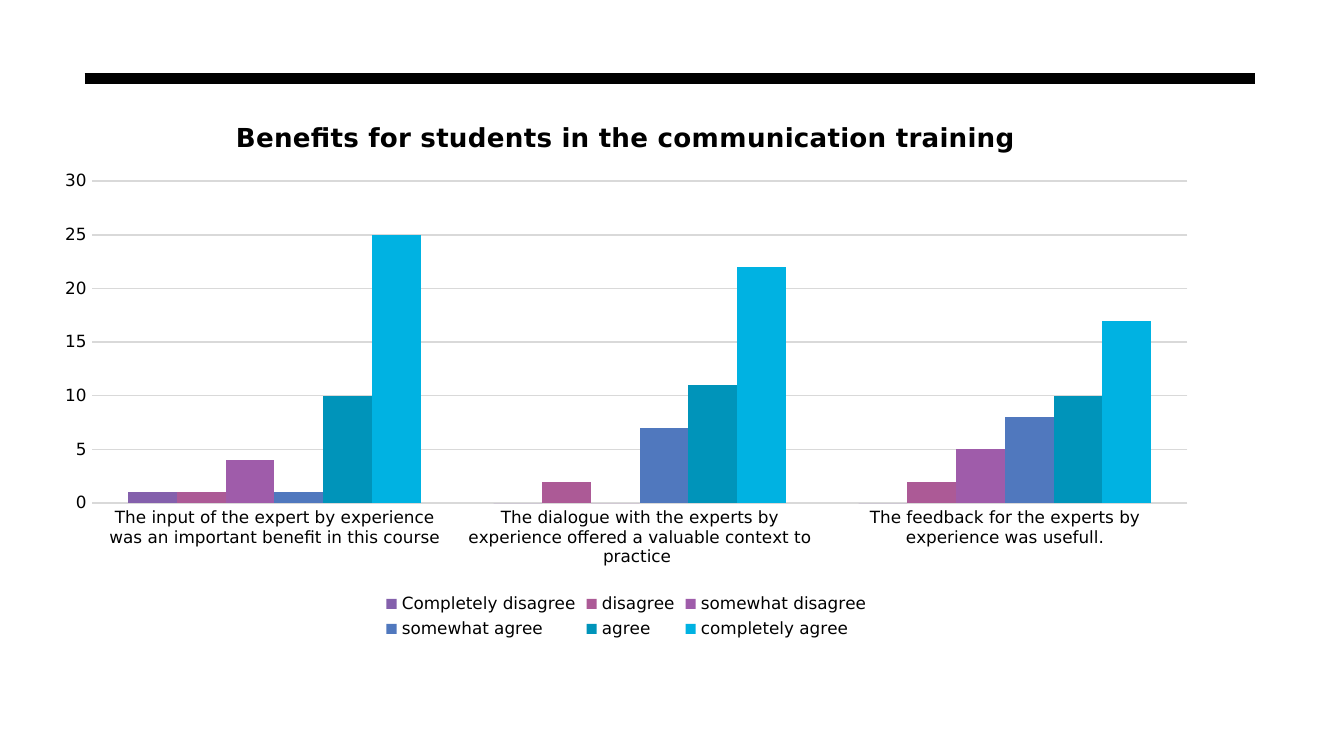
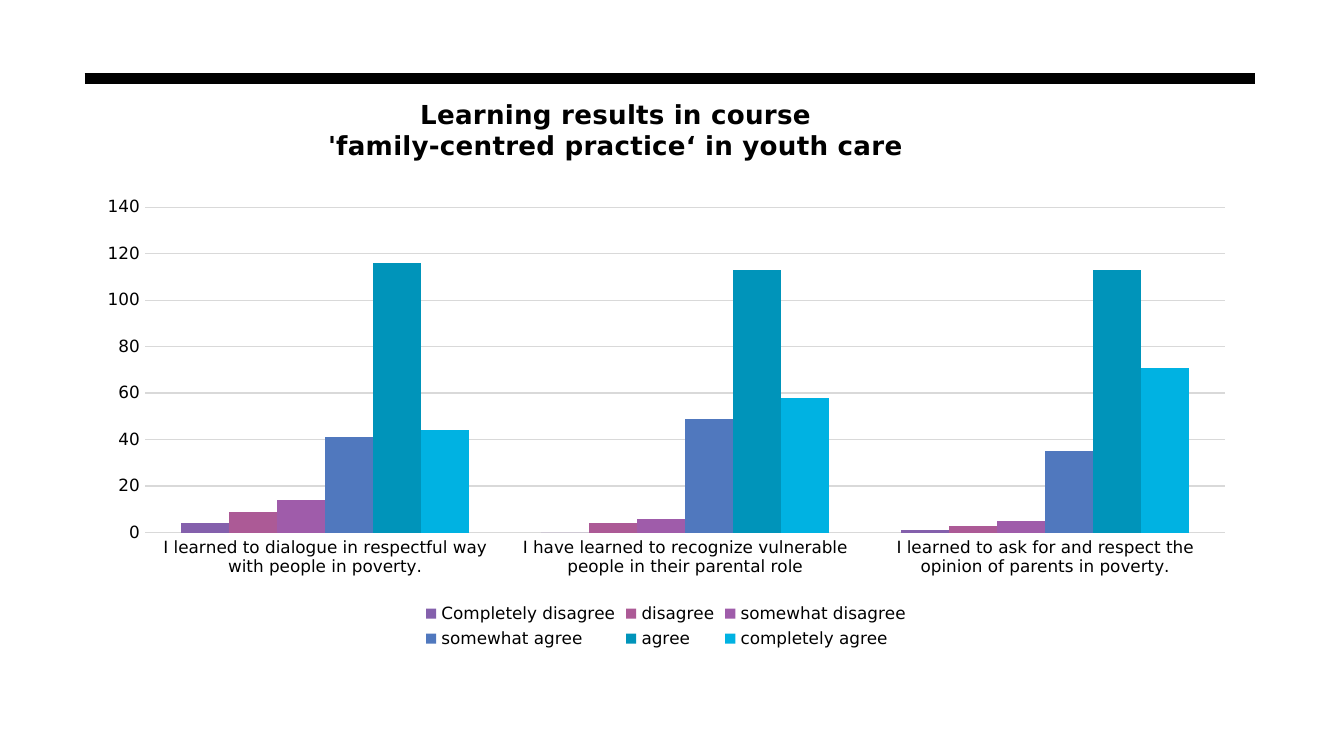
from lxml import etree
from pptx import Presentation
from pptx.chart.data import CategoryChartData
from pptx.dml.color import RGBColor
from pptx.enum.chart import XL_CHART_TYPE, XL_LEGEND_POSITION, XL_TICK_MARK
from pptx.enum.shapes import MSO_CONNECTOR
from pptx.oxml.ns import qn
from pptx.util import Inches, Pt

COLUMNS = XL_CHART_TYPE.COLUMN_CLUSTERED
BOTTOM = XL_LEGEND_POSITION.BOTTOM
NO_TICK = XL_TICK_MARK.NONE
STRAIGHT = MSO_CONNECTOR.STRAIGHT

WIDTH = Inches(10)
HEIGHT = WIDTH * 9 // 16
FONT = "DejaVu Sans"
BLACK, GRID = "000000", "D9D9D9"
BAND = (0.063, 0.1035, 0.871)
ANSWERS = {
    "Completely disagree": "8460AC",
    "disagree": "AC5A96",
    "somewhat disagree": "9F5CAA",
    "somewhat agree": "5078BE",
    "agree": "0094BA",
    "completely agree": "00B2E2",
}
SURVEYS = [
    {
        "title": ["Benefits for students in the communication training"],
        "box": (0.031, 0.13, 0.87, 0.722),
        "title_at": {"x": 0.162, "y": 0.03},
        "plot_at": {"x": 0.043, "y": 0.152, "w": 0.937, "h": 0.59},
        "scale": (30, 5),
        "votes": {
            "The input of the expert by experience was an important benefit in this course":
                (1, 1, 4, 1, 10, 25),
            "The dialogue with the experts by experience offered a valuable context to practice ":
                (0, 2, 0, 7, 11, 22),
            "The feedback for the experts by experience was usefull.":
                (0, 2, 5, 8, 10, 17),
        },
    },
    {
        "title": ["Learning results in course", "'family-centred practice‘ in youth care"],
        "box": (0.063, 0.123, 0.865, 0.742),
        "title_at": {"x": 0.206, "y": 0},
        "plot_at": {"x": 0.052, "y": 0.204, "w": 0.929, "h": 0.58},
        "scale": (140, 20),
        "votes": {
            "I learned to dialogue in respectful way with people in poverty.":
                (4, 9, 14, 41, 116, 44),
            "I have learned to recognize vulnerable people in their parental role":
                (0, 4, 6, 49, 113, 58),
            "I learned to ask for and respect the opinion of parents in poverty.":
                (1, 3, 5, 35, 113, 71),
        },
    },
]


def rgb(color):
    return RGBColor.from_string(color)


def style_font(font, size, bold=False):
    for name, value in {"name": FONT, "size": Pt(size), "bold": bold}.items():
        setattr(font, name, value)
    font.color.rgb = rgb(BLACK)


def set_layout(parent, index, shares, inner=False):
    for old in parent.findall(qn("c:layout")):
        parent.remove(old)
    layout = etree.Element(qn("c:layout"))
    manual = etree.SubElement(layout, qn("c:manualLayout"))
    settings = {"layoutTarget": "inner"} if inner else {}
    settings.update({"xMode": "edge", "yMode": "edge"}, **shares)
    for tag, value in settings.items():
        etree.SubElement(manual, qn(f"c:{tag}"), val=str(value))
    parent.insert(index, layout)


def add_band(slide):
    left, top, width = BAND
    y = int(top * HEIGHT)
    band = slide.shapes.add_connector(
        STRAIGHT, int(left * WIDTH), y, int((left + width) * WIDTH), y)
    band.line.color.rgb = rgb(BLACK)
    band.line.width = Pt(6)
    etree.SubElement(band._element.spPr, qn("a:effectLst"))


def add_title(chart, lines, position):
    chart.has_title = True
    frame = chart.chart_title.text_frame
    frame.text = "\n".join(lines)
    for paragraph in frame.paragraphs:
        style_font(paragraph.font, 14, True)
        style_font(paragraph.runs[0].font, 14, True)
    chart.chart_title.include_in_layout = False
    set_layout(chart.chart_title._element, 1, position)


def style_axes(chart, scale):
    for axis in (chart.category_axis, chart.value_axis):
        axis.major_tick_mark = axis.minor_tick_mark = NO_TICK
        axis.format.line.fill.background()
        style_font(axis.tick_labels.font, 9)
    votes_axis = chart.value_axis
    limits = {"minimum_scale": 0, "maximum_scale": scale[0], "major_unit": scale[1]}
    for name, value in limits.items():
        setattr(votes_axis, name, value)
    grid = votes_axis.major_gridlines.format.line
    grid.color.rgb = rgb(GRID)
    grid.width = Pt(0.75)


def add_survey_chart(slide, survey):
    data = CategoryChartData()
    data.categories = survey["votes"]
    for answer, counts in zip(ANSWERS, zip(*survey["votes"].values())):
        data.add_series(answer, counts)
    left, top, width, height = survey["box"]
    chart = slide.shapes.add_chart(
        COLUMNS, int(left * WIDTH), int(top * HEIGHT),
        int(width * WIDTH), int(height * HEIGHT), data).chart
    style_font(chart.font, 10)
    add_title(chart, survey["title"], survey["title_at"])
    style_axes(chart, survey["scale"])
    plot = chart.plots[0]
    for name, value in {"gap_width": 150, "overlap": 0, "vary_by_categories": False}.items():
        setattr(plot, name, value)
    for series, color in zip(plot.series, ANSWERS.values()):
        series.format.fill.solid()
        series.format.fill.fore_color.rgb = rgb(color)
    chart.has_legend = True
    chart.legend.position = BOTTOM
    chart.legend.include_in_layout = False
    style_font(chart.legend.font, 9)
    set_layout(chart._chartSpace.chart.plotArea, 0, survey["plot_at"], inner=True)


def main():
    deck = Presentation()
    deck.slide_width, deck.slide_height = WIDTH, HEIGHT
    for survey in SURVEYS:
        slide = deck.slides.add_slide(deck.slide_layouts[6])
        add_band(slide)
        add_survey_chart(slide, survey)
    deck.save("out.pptx")


if __name__ == "__main__":
    main()
